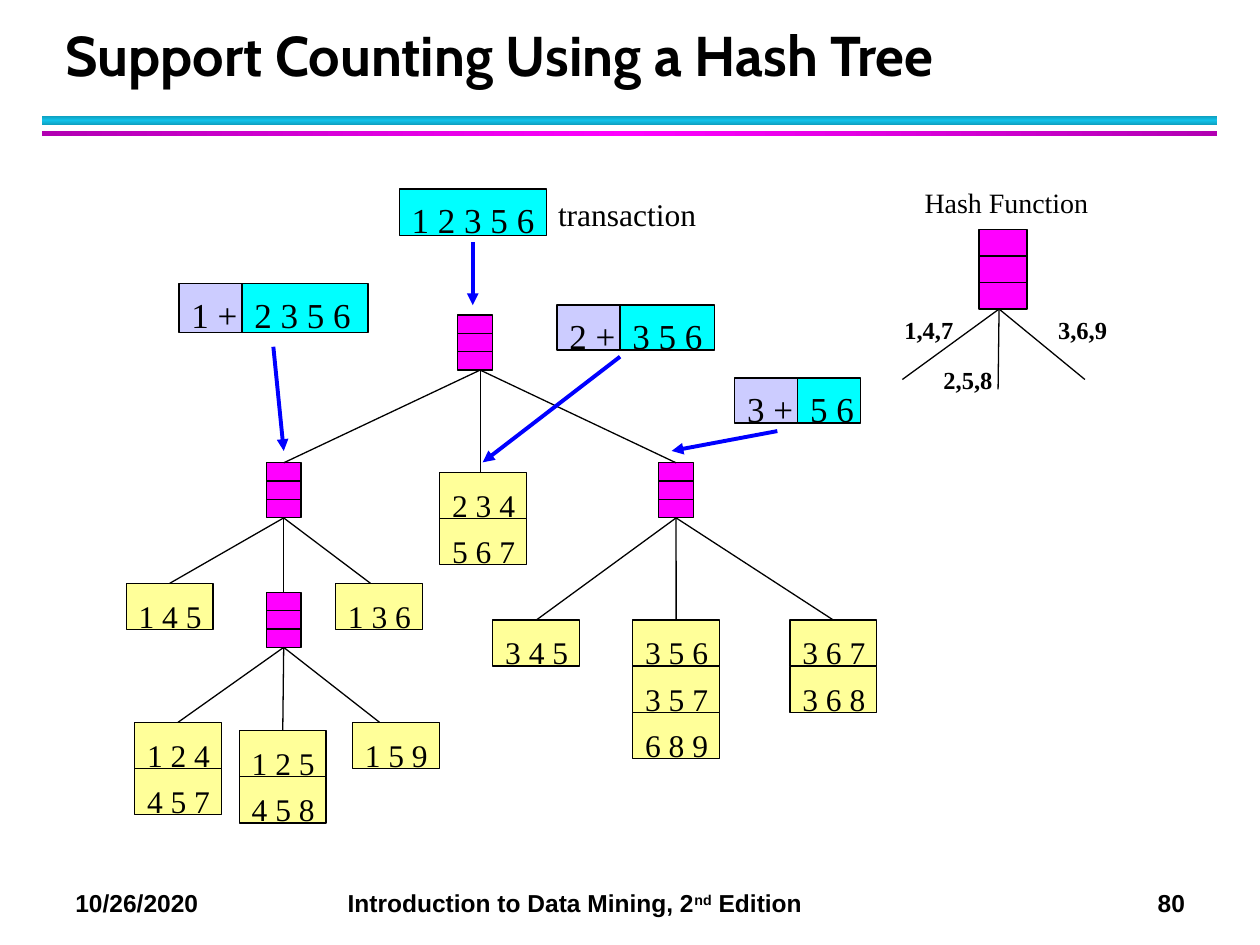
from copy import deepcopy

from lxml.etree import SubElement
from pptx import Presentation
from pptx.dml.color import RGBColor
from pptx.enum.shapes import MSO_CONNECTOR as LINE, MSO_SHAPE as SHAPE
from pptx.enum.text import MSO_ANCHOR as ANCHOR
from pptx.oxml.ns import qn
from pptx.util import Cm, Pt

COLORS = {"black": "000000", "node": "FF00FF", "leaf": "FFFF99", "items": "00FFFF",
          "prefix": "CCCCFF", "arrow": "0000FF", "teal": "12C2E9",
          "teal_dark": "0E9BBA", "magenta_dark": "B200B2"}
SERIF = "Times New Roman"

# All places and sizes are in centimetres.
TITLE = "Support Counting Using a Hash Tree"
FOOTER = [("10/26/2020\tIntroduction to Data Mining, 2", False), ("nd", True),
          (" Edition\t80", False)]
FOOTER_TABS = [(5.49, "l"), (22.37, "r")]

# top, height, edge colour, middle colour, angle
BARS = [(2.33, 0.2, "teal_dark", "teal", 90),
        (2.64, 0.1, "magenta_dark", "node", 0)]

# name: centre x, top
NODES = {"root": (9.58, 6.35), "left": (5.72, 9.33),
         "right": (13.63, 9.33), "low": (5.72, 11.94)}
NODE_SIZE = (0.7, 1.11)

# centre x, top, itemsets from top to bottom
LEAVES = [(3.42, 11.76, ["1 4 5"]), (7.64, 11.76, ["1 3 6"]),
          (9.74, 9.52, ["2 3 4", "5 6 7"]),
          (3.59, 14.56, ["1 2 4", "4 5 7"]), (5.7, 14.73, ["1 2 5", "4 5 8"]),
          (7.98, 14.56, ["1 5 9"]), (10.81, 12.5, ["3 4 5"]),
          (13.63, 12.5, ["3 5 6", "3 5 7", "6 8 9"]),
          (16.8, 12.5, ["3 6 7", "3 6 8"])]
LEAF_SIZE = (1.75, 0.93)

# parent, child, x of an end that lies off the middle of its side
EDGES = [("root", "left", {"start_x": 9.68}),
         ("root", "2 3 4", {"start_x": 9.68, "end_x": 9.68}),
         ("root", "right", {"start_x": 9.68}),
         ("left", "1 4 5", {}), ("left", "low", {}), ("left", "1 3 6", {"end_x": 7.47}),
         ("right", "3 4 5", {}), ("right", "3 5 6", {}), ("right", "3 6 7", {}),
         ("low", "1 2 4", {}), ("low", "1 2 5", {}), ("low", "1 5 9", {"end_x": 7.65})]

# left, top, height, cells as (text, width, colour)
TRANSACTIONS = [(8.05, 3.81, 0.94, [("1 2 3 5 6", 2.97, "items")]),
                (3.61, 5.72, 0.99, [("1 +", 1.27, "prefix"), ("2 3 5 6", 2.54, "items")]),
                (11.23, 6.15, 0.91, [("2 +", 1.27, "prefix"), ("3 5 6", 1.9, "items")]),
                (14.81, 7.62, 0.91, [("3 +", 1.27, "prefix"), ("5 6", 1.27, "items")])]
ARROWS = [((9.53, 4.88), (9.53, 6.15)), ((5.51, 6.99), (5.72, 9.09)),
          ((12.5, 7.19), (9.73, 9.32)), ((15.67, 8.69), (13.54, 9.09))]

HASH_NODE = (20.22, 4.63, 0.97, 1.6)
HASH_HUB = (20.14, 6.23)
HASH_ENDS = [(18.19, 7.65), (20.12, 7.85), (21.87, 7.65)]

# text, left, top, width, height, size, bold
LABELS = [("1,4,7", 17.98, 6.22, 1.5, 0.84, 14, True),
          ("2,5,8", 18.77, 7.24, 1.5, 0.84, 14, True),
          ("3,6,9", 21.08, 6.22, 1.5, 0.84, 14, True),
          ("Hash Function", 18.39, 3.61, 3.84, 0.94, 16, False),
          ("transaction", 11, 3.81, 3.3, 1.02, 18, False)]

prs = Presentation()
prs.slide_width, prs.slide_height = Cm(25.4), Cm(19.05)
s = prs.slides.add_slide(prs.slide_layouts[6])


def rgb(name):
    return RGBColor.from_string(COLORS[name])


def add_text(p, text, size=18, font=SERIF, bold=False, raised=False):
    r = p.add_run()
    r.text = text
    r.font.size, r.font.name, r.font.bold = Pt(size), font, bold
    r.font.color.rgb = rgb("black")
    if raised:
        r.font._element.set("baseline", "30000")


def text_box(left, top, width, height, wrap=False):
    tf = s.shapes.add_textbox(Cm(left), Cm(top), Cm(width), Cm(height)).text_frame
    tf.word_wrap = wrap
    return tf


def rect(left, top, width, height, color):
    sp = s.shapes.add_shape(SHAPE.RECTANGLE, Cm(left), Cm(top), Cm(width), Cm(height))
    sp.shadow.inherit = False
    sp.fill.solid()
    sp.fill.fore_color.rgb = rgb(color)
    sp.line.color.rgb = rgb("black")
    sp.line.width = Pt(0.75)
    return sp


def cell(left, top, width, height, color, text, size, inset_top):
    sp = rect(left, top, width, height, color)
    tf = sp.text_frame
    tf.word_wrap = True
    tf.vertical_anchor = ANCHOR.TOP
    tf.margin_top, tf.margin_right, tf.margin_bottom = Cm(inset_top), 0, 0
    p = tf.paragraphs[0]
    p.alignment = 1
    add_text(p, text, size=size)
    return sp


def line(start, end, color="black", width=0.75, arrow=False):
    c = s.shapes.add_connector(LINE.STRAIGHT, *(Cm(v) for v in (*start, *end)))
    c.line.color.rgb = rgb(color)
    c.line.width = Pt(width)
    if arrow:
        SubElement(c.line._get_or_add_ln(), qn("a:tailEnd"), type="triangle")
    SubElement(c._element.spPr, qn("a:effectLst"))
    return c


def hash_node(center, top, width, height):
    """Box split into three equal slots."""
    left = center - width / 2
    sp = rect(left, top, width, height, "node")
    for i in (1, 2):
        y = top + i * height / 3
        line((left, y), (left + width, y))
    return sp


def edge(parent, child, start_x=None, end_x=None):
    """Line from bottom to top, joined at each end that has no x of its own."""
    start = (start_x or 0, (parent.top + parent.height) / Cm(1))
    c = line(start, (end_x or 0, child.top / Cm(1)))
    if start_x is None:
        c.begin_connect(parent, 2)
    if end_x is None:
        c.end_connect(child, 0)


def gradient_bar(top, height, outer, middle, angle):
    sp = rect(0.84, top, 23.7, height, middle)
    sp.line.fill.background()
    sp.fill.gradient()
    sp.fill.gradient_angle = angle
    first, last = sp.fill.gradient_stops
    first.color.rgb = last.color.rgb = rgb(outer)
    first.position, last.position = 0, 1
    stops = sp._element.spPr.find(qn("a:gradFill")).find(qn("a:gsLst"))
    stops.insert(1, deepcopy(stops[0]))
    center = sp.fill.gradient_stops[1]
    center.color.rgb, center.position = rgb(middle), 0.5


for bar in BARS:
    gradient_bar(*bar)

tf = text_box(1.07, 0.43, 23.01, 1.47, wrap=True)
tf.vertical_anchor = ANCHOR.BOTTOM
tf.paragraphs[0].line_spacing = Pt(36)
add_text(tf.paragraphs[0], TITLE, size=32, font="Cabin", bold=True)

p = text_box(1.27, 17.78, 23.7, 0.86, wrap=True).paragraphs[0]
tabs = SubElement(p._p.get_or_add_pPr(), qn("a:tabLst"))
for pos, align in FOOTER_TABS:
    SubElement(tabs, qn("a:tab"), pos=str(Cm(pos)), algn=align)
for text, raised in FOOTER:
    add_text(p, text, size=14, font="Arial", bold=True, raised=raised)

tree = {name: hash_node(*place, *NODE_SIZE) for name, place in NODES.items()}
leaf_w, leaf_h = LEAF_SIZE
for center, top, itemsets in LEAVES:
    for i, items in enumerate(itemsets):
        tree[items] = cell(center - leaf_w / 2, top + i * leaf_h, leaf_w, leaf_h,
                           "leaf", items, 18, 0.27)
for parent, child, ends in EDGES:
    edge(tree[parent], tree[child], **ends)

for left, top, height, cells in TRANSACTIONS:
    for text, width, color in cells:
        cell(left, top, width, height, color, text, 20, 0.2)
        left += width
for start, end in ARROWS:
    line(start, end, color="arrow", width=2.25, arrow=True)

hash_node(*HASH_NODE)
for end in HASH_ENDS:
    line(HASH_HUB, end)
for text, left, top, width, height, size, bold in LABELS:
    add_text(text_box(left, top, width, height).paragraphs[0], text, size=size, bold=bold)

prs.save("out.pptx")
